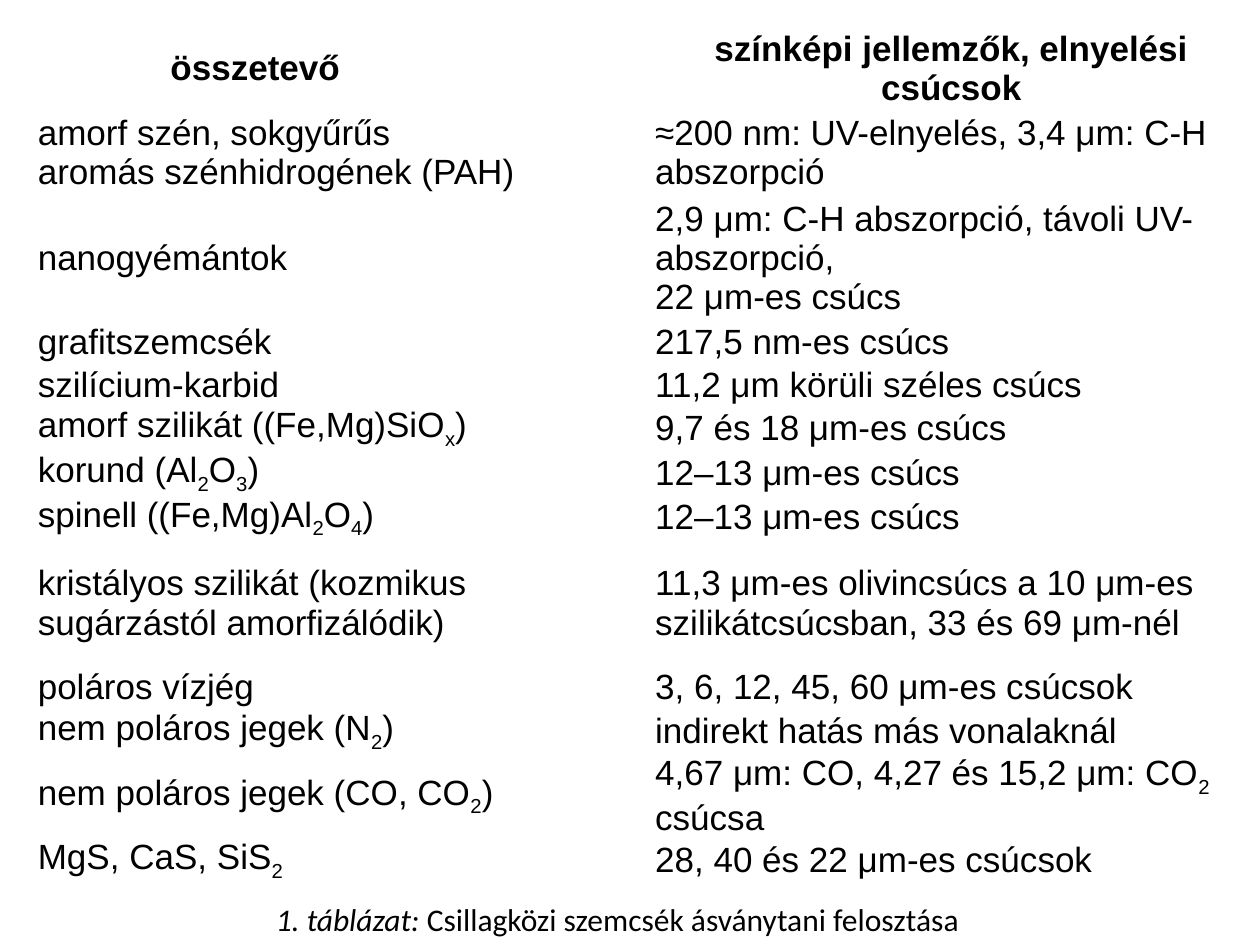
from pptx import Presentation
from pptx.dml.color import RGBColor
from pptx.enum.text import MSO_ANCHOR, PP_ALIGN
from pptx.util import Pt

MIDDLE = MSO_ANCHOR.MIDDLE
CENTER = PP_ALIGN.CENTER
COLORS = {"text": "000000"}
LINE_HEIGHT = 24.12
CELL_INDENT = 7.2
HEADER_INDENT = 83

# (height in lines, component, spectral features); "_" lowers the next character
ROWS = [
    (2, "összetevő", "színképi jellemzők, elnyelési csúcsok"),
    (2, "amorf szén, sokgyűrűs\naromás szénhidrogének (PAH)",
     "≈200 nm: UV-elnyelés, 3,4 μm: C-H abszorpció"),
    (3, "nanogyémántok",
     "2,9 μm: C-H abszorpció, távoli UV-abszorpció,\n22 μm-es csúcs"),
    (1, "grafitszemcsék", "217,5 nm-es csúcs"),
    (1, "szilícium-karbid", "11,2 μm körüli széles csúcs"),
    (1, "amorf szilikát ((Fe,Mg)SiO_x)", "9,7 és 18 μm-es csúcs"),
    (1, "korund (Al_2O_3)", "12–13 μm-es csúcs"),
    (1, "spinell ((Fe,Mg)Al_2O_4)", "12–13 μm-es csúcs"),
    (3, "kristályos szilikát (kozmikus\nsugárzástól amorfizálódik)",
     "11,3 μm-es olivincsúcs a 10 μm-es szilikátcsúcsban, 33 és 69 μm-nél"),
    (1, "poláros vízjég", "3, 6, 12, 45, 60 μm-es csúcsok"),
    (1, "nem poláros jegek (N_2)", "indirekt hatás más vonalaknál"),
    (2, "nem poláros jegek (CO, CO_2)",
     "4,67 μm: CO, 4,27 és 15,2 μm: CO_2 csúcsa"),
    (1, "MgS, CaS, SiS_2", "28, 40 és 22 μm-es csúcsok"),
]


def set_font(p, name, size):
    p.font.name = name
    p.font.size = Pt(size)
    p.font.color.rgb = RGBColor.from_string(COLORS["text"])


def add_run(p, text, subscript=False):
    if text:
        r = p.add_run()
        r.text = text
        if subscript:
            r.font._element.set("baseline", "-25000")


def add_formula_text(p, text):
    for i, line in enumerate(text.split("\n")):
        if i:
            p.add_line_break()
        first, *rest = line.split("_")
        add_run(p, first)
        for part in rest:
            add_run(p, part[0], subscript=True)
            add_run(p, part[1:])


def fill_cell(cell, text, header, indent):
    cell.fill.background()
    cell.vertical_anchor = MIDDLE
    cell.margin_left = cell.margin_right = Pt(0)
    cell.margin_top = cell.margin_bottom = Pt(0)
    p = cell.text_frame.paragraphs[0]
    set_font(p, "Arial", 20)
    p.font.bold = header
    p._p.get_or_add_pPr().set("marL", str(Pt(indent)))
    add_formula_text(p, text)
    return p


def add_minerals_table(slide, left, top, width):
    height = LINE_HEIGHT * sum(lines for lines, *_ in ROWS)
    table = slide.shapes.add_table(
        len(ROWS), 2, Pt(left), Pt(top), Pt(width), Pt(height)).table
    table.first_row = table.horz_banding = False
    for i, (lines, component, features) in enumerate(ROWS):
        header = i == 0
        table.rows[i].height = Pt(LINE_HEIGHT * lines)
        fill_cell(table.cell(i, 0), component, header,
                  HEADER_INDENT if header else CELL_INDENT)
        p = fill_cell(table.cell(i, 1), features, header,
                      0 if header else CELL_INDENT)
        if header:
            p.alignment = CENTER


def add_caption(slide, left, top, width, height):
    sp = slide.shapes.add_textbox(Pt(left), Pt(top), Pt(width), Pt(height))
    tf = sp.text_frame
    tf.word_wrap = True
    p = tf.paragraphs[0]
    set_font(p, "Calibri", 18)
    add_run(p, "1. táblázat:")
    p.runs[0].font.italic = True
    add_run(p, " Csillagközi szemcsék ásványtani felosztása")


def main():
    prs = Presentation()
    prs.slide_width, prs.slide_height = Pt(720), Pt(540)
    slide = prs.slides.add_slide(prs.slide_layouts[6])
    add_minerals_table(slide, 14.4, 15, 705.6)
    add_caption(slide, 150.5, 511, 408, 29)
    prs.save("out.pptx")


if __name__ == "__main__":
    main()
